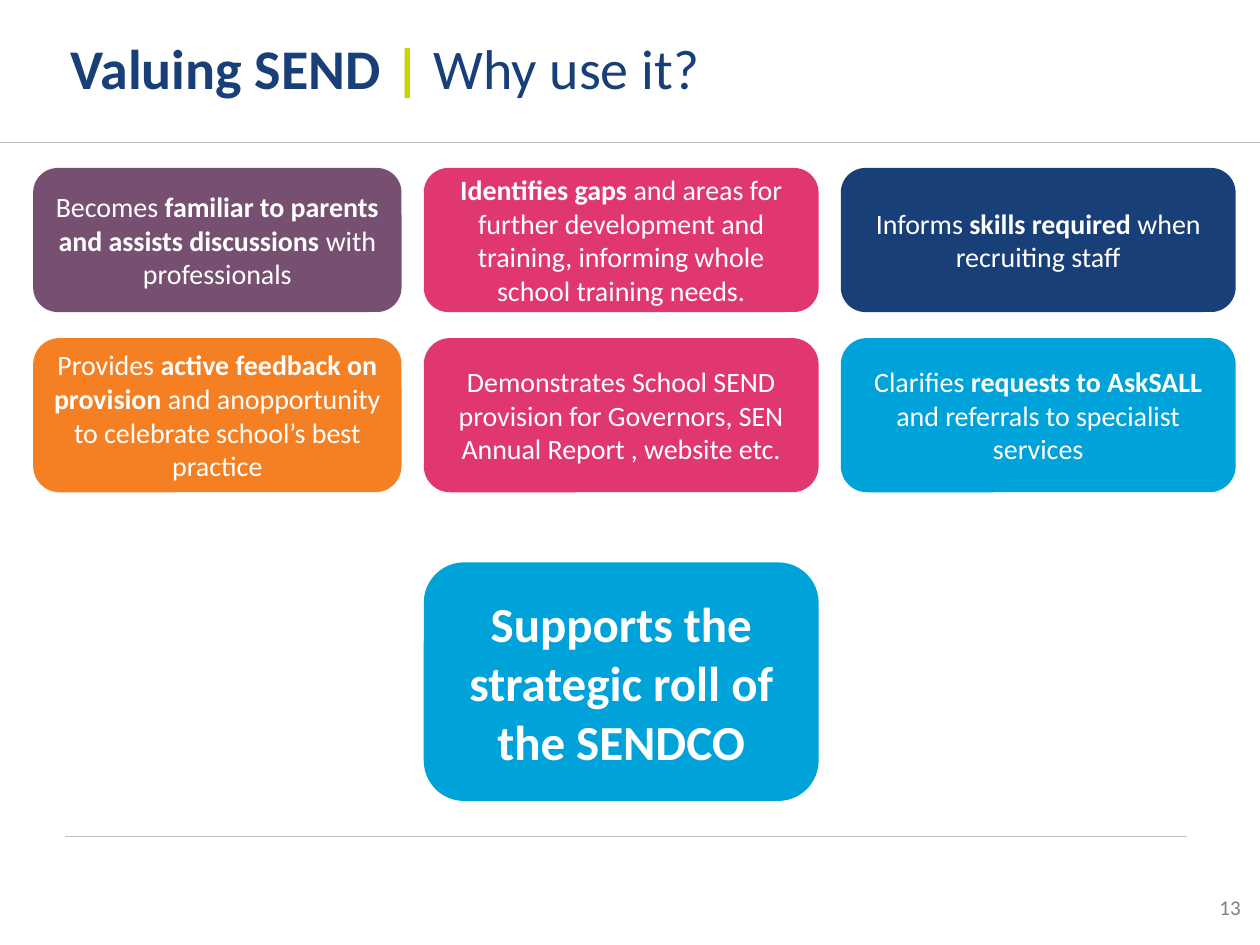
from lxml import etree
from pptx import Presentation
from pptx.dml.color import RGBColor
from pptx.enum.shapes import MSO_CONNECTOR, MSO_SHAPE
from pptx.enum.text import MSO_ANCHOR, PP_ALIGN
from pptx.oxml.ns import qn
from pptx.util import Inches, Pt

STRAIGHT = MSO_CONNECTOR.STRAIGHT
ROUNDED = MSO_SHAPE.ROUNDED_RECTANGLE
MIDDLE, TOP = MSO_ANCHOR.MIDDLE, MSO_ANCHOR.TOP
LEFT, CENTER = PP_ALIGN.LEFT, PP_ALIGN.CENTER

NAVY = RGBColor(0x19, 0x3F, 0x78)
LIME = RGBColor(0xC9, 0xD3, 0x00)
PLUM = RGBColor(0x77, 0x4F, 0x71)
PINK = RGBColor(0xE0, 0x38, 0x6E)
ORANGE = RGBColor(0xF5, 0x80, 0x23)
CYAN = RGBColor(0x00, 0xA3, 0xD9)
WHITE = RGBColor(0xFF, 0xFF, 0xFF)
GREY = RGBColor(0x80, 0x80, 0x80)
RULE_GREY = RGBColor(0xBF, 0xBF, 0xBF)

# Content: each run is (text, bold) or (text, bold, colour)
TITLE = [("Valuing SEND ", True), ("| ", True, LIME), ("Why use it?", False)]
PAGE_NUMBER = [("13", False)]
REASONS = [
    [
        (PLUM, [("Becomes ", False),
                ("familiar to parents and assists discussions ", True),
                ("with professionals", False)]),
        (PINK, [("Identifies gaps ", True),
                ("and areas for further development and training, "
                 "informing whole school training needs.", False)]),
        (NAVY, [("Informs ", False), ("skills required ", True),
                ("when recruiting staff", False)]),
    ],
    [
        (ORANGE, [("Provides ", False), ("active feedback on provision ", True),
                  ("and anopportunity to celebrate school’s best practice", False)]),
        (PINK, [("Demonstrates School SEND provision for Governors, "
                 "SEN Annual Report , website etc.", False)]),
        (CYAN, [("Clarifies ", False), ("requests to AskSALL ", True),
                ("and referrals to specialist services", False)]),
    ],
]
CONCLUSION = [("Supports the strategic roll of the SENDCO", True)]

# Layout in inches
SLIDE_W, SLIDE_H = 10, 7.5
HEADER_H = 1.13
GRID_LEFT, GRID_TOP = 0.27, 1.34
COLUMN_WIDTHS, COLUMN_GAP = [2.91, 3.12, 3.12], 0.19
ROW_HEIGHTS, ROW_GAP = [1.13, 1.21], 0.22
CONCLUSION_TOP, CONCLUSION_H = 4.47, 1.88
RULES = [(0, SLIDE_W, HEADER_H, 0.5), (0.52, 9.42, 6.64, 0.25)]


def starts(first, sizes, gap):
    return [first + sum(sizes[:i]) + i * gap for i in range(len(sizes))]


def write(frame, runs, size=16, color=WHITE, align=CENTER, anchor=MIDDLE,
          inset=None, spacing=None):
    frame.word_wrap = True
    frame.vertical_anchor = anchor
    if inset is not None:
        frame.margin_left = frame.margin_right = Inches(inset)
        frame.margin_top = frame.margin_bottom = Inches(inset)
    paragraph = frame.paragraphs[0]
    paragraph.alignment = align
    if spacing:
        paragraph.line_spacing = spacing
    for text, bold, *own_color in runs:
        run = paragraph.add_run()
        run.text = text
        run.font.name = "Calibri"
        run.font.size = Pt(size)
        run.font.bold = bold
        run.font.color.rgb = own_color[0] if own_color else color


def add_card(slide, left, top, width, height, color, runs, size=16):
    card = slide.shapes.add_shape(
        ROUNDED, Inches(left), Inches(top), Inches(width), Inches(height))
    card.shadow.inherit = False
    card.fill.solid()
    card.fill.fore_color.rgb = color
    card.line.color.rgb = color
    card.line.width = Pt(1)
    write(card.text_frame, runs, size=size)


def add_rule(slide, x1, x2, y, width):
    rule = slide.shapes.add_connector(
        STRAIGHT, Inches(x1), Inches(y), Inches(x2), Inches(y))
    rule.line.color.rgb = RULE_GREY
    rule.line.width = Pt(width)
    etree.SubElement(rule._element.spPr, qn("a:effectLst"))


def main():
    deck = Presentation()
    deck.slide_width, deck.slide_height = Inches(SLIDE_W), Inches(SLIDE_H)
    slide = deck.slides.add_slide(deck.slide_layouts[5])

    # Header and footer
    for rule in RULES:
        add_rule(slide, *rule)
    title = slide.shapes.title
    title.left, title.top = Inches(0.56), 0
    title.width, title.height = Inches(8.8), Inches(HEADER_H)
    write(title.text_frame, TITLE, size=32, color=NAVY, align=LEFT,
          inset=0, spacing=0.9)
    page_number = slide.shapes.add_textbox(
        Inches(9.58), Inches(7.05), Inches(0.55), Inches(0.3))
    write(page_number.text_frame, PAGE_NUMBER, size=12, color=GREY,
          align=LEFT, anchor=TOP)

    # Grid of reasons
    columns = list(zip(starts(GRID_LEFT, COLUMN_WIDTHS, COLUMN_GAP), COLUMN_WIDTHS))
    rows = zip(starts(GRID_TOP, ROW_HEIGHTS, ROW_GAP), ROW_HEIGHTS)
    for (top, height), reasons in zip(rows, REASONS):
        for (left, width), (color, runs) in zip(columns, reasons):
            add_card(slide, left, top, width, height, color, runs)

    # Conclusion under the middle column
    left, width = columns[1]
    add_card(slide, left, CONCLUSION_TOP, width, CONCLUSION_H, CYAN,
             CONCLUSION, size=28)

    deck.save("out.pptx")


if __name__ == "__main__":
    main()
